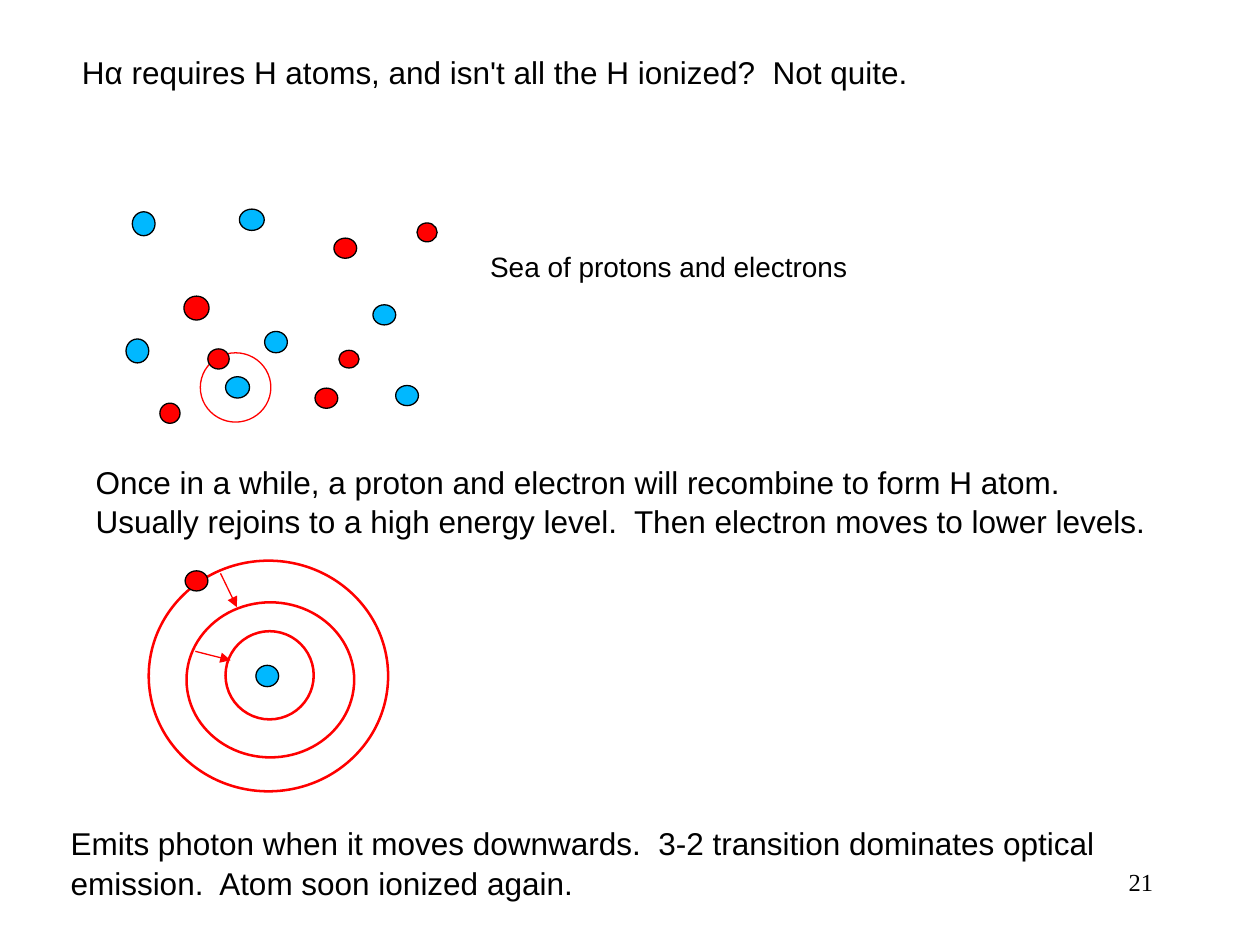
from lxml.etree import SubElement
from pptx import Presentation
from pptx.dml.color import RGBColor
from pptx.enum.shapes import MSO_CONNECTOR as Connector, MSO_SHAPE as Shape
from pptx.enum.text import MSO_ANCHOR as Anchor, MSO_AUTO_SIZE as AutoSize, PP_ALIGN as Align
from pptx.oxml.ns import qn
from pptx.util import Pt

BLACK = RGBColor(0x00, 0x00, 0x00)
RED = RGBColor(0xFF, 0x00, 0x00)
BLUE = RGBColor(0x00, 0xB8, 0xFF)

# Particles as left, top, width, height in points
PROTONS = [
    (75.6, 121, 13, 13.7), (151.2, 189.4, 13, 12.2), (72, 193.7, 13, 13.7),
    (136.8, 119.5, 14.2, 12.2), (213.1, 174.2, 13, 11.5),
    (226.1, 220.3, 13, 11.5), (128.9, 215.3, 13.7, 12.2),
]
ELECTRONS = [
    (105.1, 169.2, 14.4, 13.7), (190.8, 136.1, 13, 11.5),
    (193.7, 200.2, 11.5, 10.1), (180, 221.8, 13, 11.5),
    (91.4, 230.4, 11.5, 11.5), (238.3, 127.4, 11.5, 10.8),
]
CAPTURE_ORBIT = (114.5, 201.6, 40.3, 39.6)
CAPTURED_ELECTRON = (118.8, 199.4, 12.2, 11.5)
NUCLEUS = (146.2, 380.2, 13, 12.2)
ENERGY_LEVELS = [
    (128.9, 360.7, 50.4, 50.4), (85, 320.4, 136.8, 131.8),
    (106.6, 344.2, 95.8, 88.6),
]
EXCITED_ELECTRON = (105.8, 326.2, 13, 11.5)
JUMPS = [(126, 327.6, 135.4, 347), (111.6, 372.2, 131.8, 377.3)]


def points(values):
    return [Pt(value) for value in values]


def write_text(box, text, size=18, font="Arial", align=Align.LEFT,
               spacing=1.04, margins=(0, 0)):
    """Fill a text shape; each line of text is a paragraph."""
    frame = box.text_frame
    frame.word_wrap = True
    frame.auto_size = AutoSize.NONE
    frame.vertical_anchor = Anchor.TOP
    frame.margin_left = frame.margin_right = Pt(margins[0])
    frame.margin_top = frame.margin_bottom = Pt(margins[1])
    frame.text = text
    for para in frame.paragraphs:
        para.alignment = align
        para.line_spacing = spacing
        for span in para.runs:
            span.font.size = Pt(size)
            span.font.name = font
            span.font.color.rgb = BLACK


def add_title(slide, bounds, text):
    title = slide.shapes.title
    title.left, title.top, title.width, title.height = points(bounds)
    write_text(title, text)


def add_text(slide, bounds, text, **text_format):
    write_text(slide.shapes.add_textbox(*points(bounds)), text, **text_format)


def add_oval(slide, bounds, fill=None, line=BLACK, weight=0.75):
    oval = slide.shapes.add_shape(Shape.OVAL, *points(bounds))
    oval.shadow.inherit = False
    if fill is None:
        oval.fill.background()
    else:
        oval.fill.solid()
        oval.fill.fore_color.rgb = fill
    oval.line.color.rgb = line
    oval.line.width = Pt(weight)


def add_arrow(slide, ends):
    arrow = slide.shapes.add_connector(Connector.STRAIGHT, *points(ends))
    arrow.line.color.rgb = RED
    arrow.line.width = Pt(0.75)
    SubElement(arrow.line._get_or_add_ln(), qn("a:tailEnd"), type="triangle")
    SubElement(arrow._element.spPr, qn("a:effectLst"))


def add_particle_sea(slide):
    for particles, colour in ((PROTONS, BLUE), (ELECTRONS, RED)):
        for bounds in particles:
            add_oval(slide, bounds, fill=colour)
    add_oval(slide, CAPTURE_ORBIT, line=RED)
    add_oval(slide, CAPTURED_ELECTRON, fill=RED)


def add_atom(slide):
    add_oval(slide, NUCLEUS, fill=BLUE)
    for bounds in ENERGY_LEVELS:
        add_oval(slide, bounds, line=RED, weight=1.45)
    add_oval(slide, EXCITED_ELECTRON, fill=RED)
    for ends in JUMPS:
        add_arrow(slide, ends)


def main():
    deck = Presentation()
    deck.slide_width, deck.slide_height = Pt(720), Pt(540)
    slide = deck.slides.add_slide(deck.slide_layouts.get_by_name("Title Only"))

    add_title(slide, (46.8, 29.5, 534.2, 21.6),
              "Hα requires H atoms, and isn't all the H ionized?  Not quite.")
    add_particle_sea(slide)
    add_text(slide, (280.1, 141.8, 223.9, 19.4),
             "Sea of protons and electrons", size=16)
    add_text(slide, (54.7, 263.5, 623.5, 43.9),
             "Once in a while, a proton and electron will recombine to form H atom.\n"
             "Usually rejoins to a high energy level.  Then electron moves to lower levels.")
    add_atom(slide)
    add_text(slide, (40.3, 470.2, 625.7, 43.9),
             "Emits photon when it moves downwards.  3-2 transition dominates "
             "optical emission.  Atom soon ionized again.")
    add_text(slide, (516.2, 491.8, 149.8, 36), "21", size=14,
             font="Times New Roman", align=Align.RIGHT, spacing=1.0,
             margins=(7.2, 3.6))
    deck.save("out.pptx")


if __name__ == "__main__":
    main()
